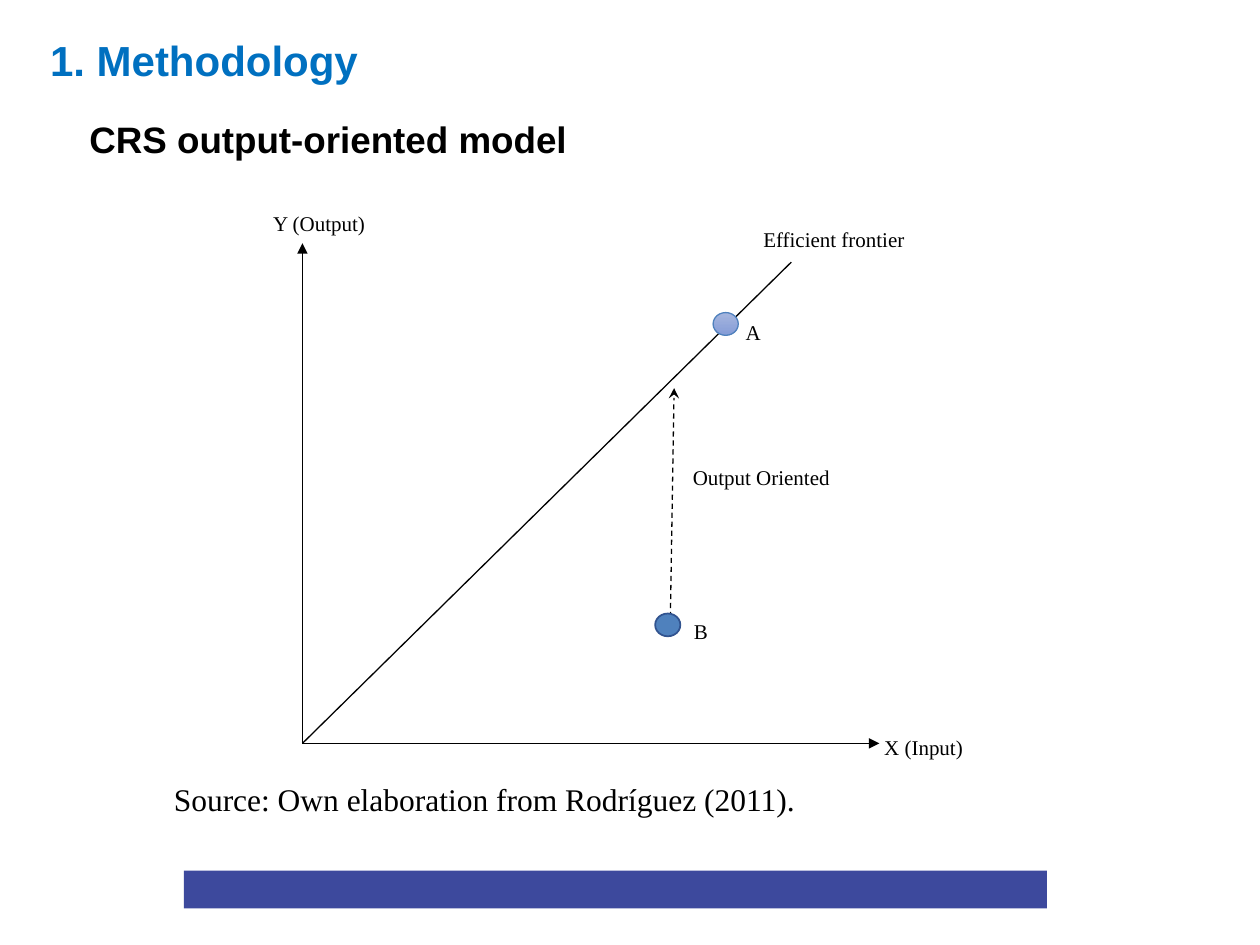
from typing import NamedTuple, Optional

from pptx import Presentation
from pptx.dml.color import RGBColor
from pptx.enum.dml import MSO_LINE
from pptx.enum.shapes import MSO_CONNECTOR, MSO_SHAPE
from pptx.enum.text import MSO_ANCHOR, PP_ALIGN
from pptx.oxml.ns import qn
from pptx.util import Pt
from lxml import etree

DASH = MSO_LINE.DASH
LINE = MSO_CONNECTOR.STRAIGHT
OVAL, RECT = MSO_SHAPE.OVAL, MSO_SHAPE.RECTANGLE
MIDDLE, TOP = MSO_ANCHOR.MIDDLE, MSO_ANCHOR.TOP
CENTER, LEFT = PP_ALIGN.CENTER, PP_ALIGN.LEFT

SANS, SERIF = "Arial", "Times New Roman"
COLORS = {
    "ink": "000000",
    "title": "0070C0",
    "bar": "3D499D",
    "blue": "4F81BD",
    "navy": "31538F",
    "pale": "A6B6DE",
    "soft": "859CD7",
}


class Box(NamedTuple):
    left: float
    top: float
    width: float
    height: float


class Text(NamedTuple):
    words: str
    box: Box
    size: float = 12
    face: str = SERIF
    color: str = "ink"
    bold: bool = False
    align: PP_ALIGN = LEFT
    anchor: MSO_ANCHOR = TOP
    spacing: Optional[float] = None
    after: float = 0


class Stroke(NamedTuple):
    start: tuple[float, float]
    end: tuple[float, float]
    head: Optional[str] = None
    dashed: bool = False


class Dot(NamedTuple):
    left: float
    top: float
    fills: tuple[str, ...]
    edge: str
    weight: float


def label(words: str, left: float, top: float, width: float, height: float) -> Text:
    return Text(words, Box(left, top, width, height), spacing=1.5, after=12)


ORIGIN = (172.8, 424.8)
STROKES = [
    Stroke(ORIGIN, (172.8, 139), "triangle"),
    Stroke(ORIGIN, (502.5, 424.8), "triangle"),
    Stroke(ORIGIN, (452.2, 149.8)),
    Stroke((383, 357.8), (385.2, 221.8), "stealth", True),
]
DOTS = [
    Dot(407.5, 178.6, ("pale", "soft"), "blue", 0.75),
    Dot(374.4, 350.6, ("blue",), "navy", 1),
]
LABELS = [
    label("X (Input)", 498.2, 409, 115.2, 30.2),
    label("Y (Output)", 149, 109.4, 115.2, 30.2),
    label("Output Oriented", 388.8, 254.9, 97.2, 43.2),
    label("Efficient frontier", 429.1, 118.8, 115.2, 43.2),
    label("A", 419, 172.1, 33.1, 28.1),
    label("B", 389.5, 342.7, 33.1, 28.1),
]
TEXTS = [
    Text("CRS output-oriented model", Box(44, 63.4, 354, 32.4), 21, SANS, bold=True),
    Text("Source: Own elaboration from Rodríguez (2011).",
         Box(92.2, 442.1, 452.2, 28.8), 18),
    Text("1. Methodology", Box(-74.2, 8.6, 381.6, 51.1), 24, SANS, "title", True,
         CENTER, MIDDLE),
]


def rgb(name: str) -> RGBColor:
    return RGBColor.from_string(COLORS[name])


def draw_text(shapes, text: Text) -> None:
    frame = shapes.add_textbox(*map(Pt, text.box)).text_frame
    frame.word_wrap = True
    frame.vertical_anchor = text.anchor
    para = frame.paragraphs[0]
    para.text = text.words
    para.alignment = text.align
    para.space_after = Pt(text.after)
    if text.spacing:
        para.line_spacing = text.spacing
    font = para.font
    font.name, font.size, font.bold = text.face, Pt(text.size), text.bold
    font.color.rgb = rgb(text.color)


def draw_stroke(shapes, stroke: Stroke) -> None:
    link = shapes.add_connector(LINE, *map(Pt, stroke.start + stroke.end))
    link.line.color.rgb = rgb("ink")
    link.line.width = Pt(0.75)
    if stroke.dashed:
        link.line.dash_style = DASH
    props = link.line._get_or_add_ln()
    if stroke.head:
        etree.SubElement(props, qn("a:tailEnd"), type=stroke.head)
    etree.SubElement(props.getparent(), qn("a:effectLst"))


def draw_dot(shapes, dot: Dot) -> None:
    oval = shapes.add_shape(OVAL, Pt(dot.left), Pt(dot.top), Pt(14.4), Pt(13))
    oval.shadow.inherit = False
    if len(dot.fills) > 1:
        oval.fill.gradient()
        oval.fill.gradient_angle = 270
        for stop, name in zip(oval.fill.gradient_stops, dot.fills):
            stop.color.rgb = rgb(name)
    else:
        oval.fill.solid()
        oval.fill.fore_color.rgb = rgb(dot.fills[0])
    oval.line.color.rgb = rgb(dot.edge)
    oval.line.width = Pt(dot.weight)


def draw_bar(shapes, box: Box) -> None:
    bar = shapes.add_shape(RECT, *map(Pt, box))
    bar.shadow.inherit = False
    bar.fill.solid()
    bar.fill.fore_color.rgb = rgb("bar")
    bar.line.fill.background()


def main() -> None:
    deck = Presentation()
    deck.slide_width, deck.slide_height = Pt(720), Pt(540)
    shapes = deck.slides.add_slide(deck.slide_layouts[6]).shapes
    graph = shapes.add_group_shape().shapes
    for stroke in STROKES:
        draw_stroke(graph, stroke)
    for dot in DOTS:
        draw_dot(graph, dot)
    for text in LABELS:
        draw_text(graph, text)
    for text in TEXTS:
        draw_text(shapes, text)
    draw_bar(shapes, Box(105.1, 497.5, 493.2, 21.6))
    deck.save("out.pptx")


if __name__ == "__main__":
    main()
